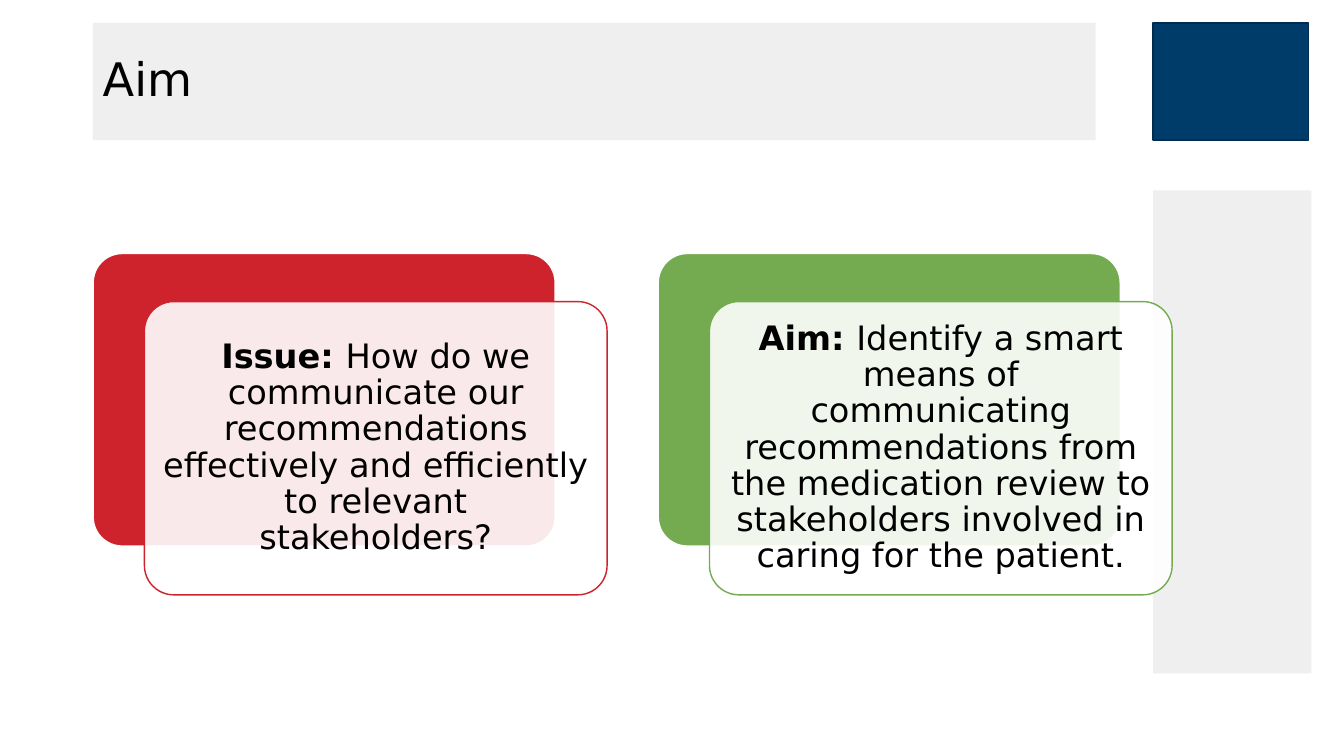
from lxml import etree
from pptx import Presentation
from pptx.dml.color import RGBColor
from pptx.enum.shapes import MSO_SHAPE as Shape
from pptx.enum.text import MSO_ANCHOR as Anchor, PP_ALIGN as Align
from pptx.oxml.ns import qn
from pptx.util import Cm, Pt

BLACK = RGBColor(0x00, 0x00, 0x00)
WHITE = RGBColor(0xFF, 0xFF, 0xFF)
GREY = RGBColor(0xEF, 0xEF, 0xF0)
NAVY = RGBColor(0x00, 0x3C, 0x69)
DARK_NAVY = RGBColor(0x00, 0x2C, 0x4E)
RED = RGBColor(0xCE, 0x22, 0x2C)
GREEN = RGBColor(0x74, 0xAA, 0x50)

deck = Presentation()
deck.slide_width, deck.slide_height = Cm(33.87), Cm(19.05)
page = deck.slides.add_slide(deck.slide_layouts[6])


def add_panel(kind, left, top, width, height, fill, line=None, weight=1):
    panel = page.shapes.add_shape(kind, Cm(left), Cm(top), Cm(width), Cm(height))
    panel.shadow.inherit = False
    panel.fill.solid()
    panel.fill.fore_color.rgb = fill
    if line is None:
        panel.line.fill.background()
    else:
        panel.line.color.rgb = line
        panel.line.width = Pt(weight)
    if kind == Shape.ROUNDED_RECTANGLE:
        panel.adjustments[0] = 0.1
    return panel


def write_text(box, spans, size, align):
    frame = box.text_frame
    frame.word_wrap = True
    frame.vertical_anchor = Anchor.MIDDLE
    para = frame.paragraphs[0]
    para.alignment = align
    para.line_spacing = 0.9
    for text, bold in spans:
        span = para.add_run()
        span.text = text
        span.font.color.rgb = BLACK
        look = {"name": "DejaVu Sans", "size": Pt(size), "bold": bold}
        for name, value in look.items():
            setattr(span.font, name, value)
    return frame


# Side panel, corner block and title bar
add_panel(Shape.RECTANGLE, 29.06, 4.8, 3.99, 12.17, GREY)
add_panel(Shape.RECTANGLE, 29.06, 0.58, 3.91, 2.95, NAVY, DARK_NAVY)
title = add_panel(Shape.RECTANGLE, 2.34, 0.58, 25.27, 2.95, GREY)
write_text(title, [("Aim", False)], 33, Align.LEFT)

# Two cards, each a coloured back with a translucent front
cards = [
    (RED, "Issue: ", "How do we communicate our recommendations effectively "
                     "and efficiently to relevant stakeholders?"),
    (GREEN, "Aim: ", "Identify a smart means of communicating recommendations from "
                     "the medication review to stakeholders involved in caring "
                     "for the patient."),
]
CARD_LEFT, CARD_TOP, CARD_STEP = 2.34, 6.38, 14.24
CARD_WIDTH, CARD_HEIGHT = 11.66, 7.39
SHIFT_X, SHIFT_Y, INSET = 1.3, 1.22, 0.22

for index, (color, label, message) in enumerate(cards):
    left = CARD_LEFT + index * CARD_STEP
    front_left, front_top = left + SHIFT_X, CARD_TOP + SHIFT_Y
    add_panel(Shape.ROUNDED_RECTANGLE, left, CARD_TOP, CARD_WIDTH, CARD_HEIGHT,
              color, WHITE, 1.5)
    front = add_panel(Shape.ROUNDED_RECTANGLE, front_left, front_top,
                      CARD_WIDTH, CARD_HEIGHT, WHITE, color)
    fill_color = front.fill._xPr.find(qn("a:solidFill"))[0]
    etree.SubElement(fill_color, qn("a:alpha")).set("val", "90000")

    box = page.shapes.add_textbox(Cm(front_left + INSET), Cm(front_top + INSET),
                                  Cm(CARD_WIDTH - 2 * INSET),
                                  Cm(CARD_HEIGHT - 2 * INSET))
    frame = write_text(box, [(label, True), (message, False)], 24, Align.CENTER)
    for side in ("left", "top", "right", "bottom"):
        setattr(frame, f"margin_{side}", Cm(0.25))

deck.save("out.pptx")
